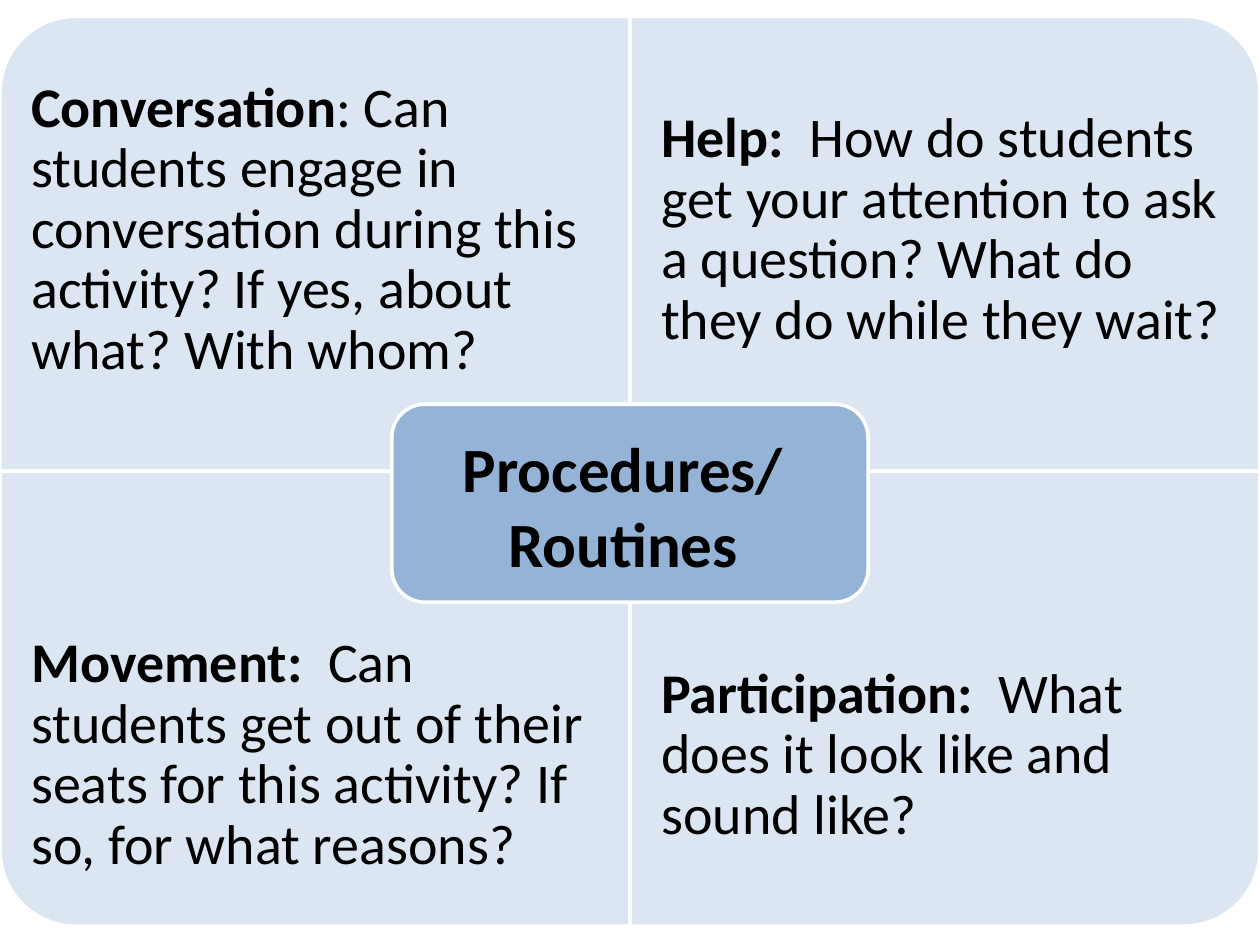
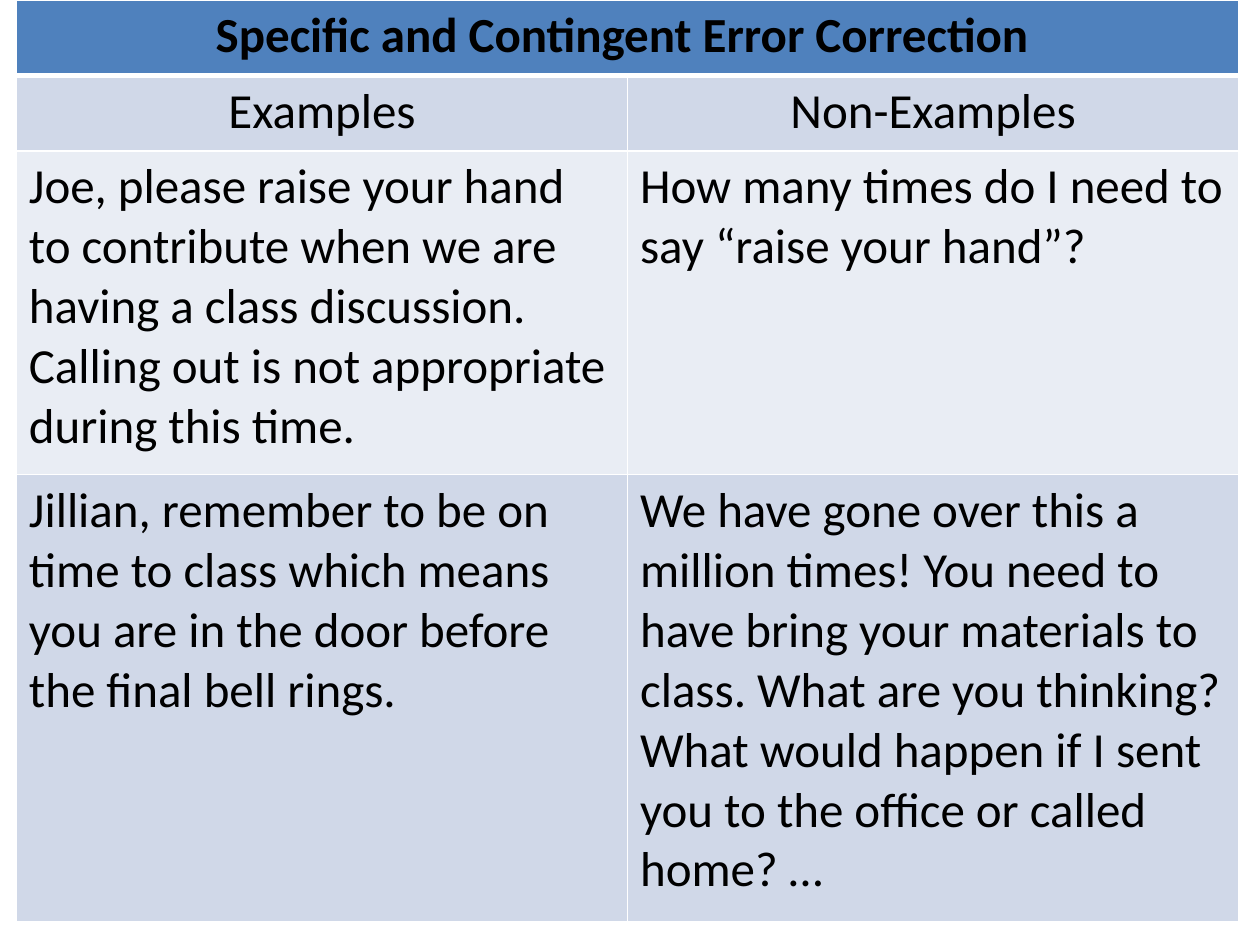
from lxml import etree
from pptx import Presentation
from pptx.dml.color import RGBColor
from pptx.enum.shapes import MSO_SHAPE
from pptx.enum.text import MSO_ANCHOR, PP_ALIGN
from pptx.oxml.ns import qn
from pptx.util import Cm, Pt

ROUND_ONE = MSO_SHAPE.ROUND_1_RECTANGLE
ROUND_ALL = MSO_SHAPE.ROUNDED_RECTANGLE
MIDDLE = MSO_ANCHOR.MIDDLE
CENTER, LEFT = PP_ALIGN.CENTER, PP_ALIGN.LEFT

FONT = "Calibri"
BLACK, WHITE = "000000", "FFFFFF"
TILE_BLUE, HUB_BLUE = "DCE6F2", "95B3D7"
HEADER_BLUE, BAND_DARK, BAND_LIGHT = "4F81BD", "D0D8E8", "E9EDF4"


def color(value):
    return RGBColor.from_string(value)


def write(para, size, parts, align=LEFT):
    """Fill a paragraph with (text, bold) parts in the common font."""
    para.alignment = align
    para.font.name = FONT
    para.font.size = Pt(size)
    para.font.color.rgb = color(BLACK)
    for text, bold in parts:
        span = para.add_run()
        span.text = text
        span.font.bold = bold


deck = Presentation()
deck.slide_width, deck.slide_height = Cm(25.4), Cm(19.05)
blank = deck.slide_layouts[6]

# Slide 1: four question tiles around a central topic
page = deck.slides.add_slide(blank)
TILE_WIDTH, TILE_HEIGHT, TILES_TOP = 12.7, 9.17, 0.33
TEXT_HEIGHT = 6.88
# column, row, rotation that turns the round corner outwards, text top
tiles = [
    (0, 0, 270, 1.2, "Conversation",
     ": Can students engage in conversation during this activity? If yes, about what? With whom?"),
    (1, 0, 0, 1.2, "Help:",
     "  How do students get your attention to ask a question? What do they do while they wait?"),
    (0, 1, 180, 11.79, "Movement:",
     "  Can students get out of their seats for this activity? If so, for what reasons?"),
    (1, 1, 90, 11.79, "Participation:",
     "  What does it look like and sound like?"),
]
panels = []
for column, row, turn, text_top, topic, question in tiles:
    # A quarter turn swaps the sides of the frame about its centre
    width, height = TILE_WIDTH, TILE_HEIGHT
    if turn % 180:
        width, height = height, width
    center_x = (column + 0.5) * TILE_WIDTH
    center_y = TILES_TOP + (row + 0.5) * TILE_HEIGHT
    tile = page.shapes.add_shape(ROUND_ONE, Cm(center_x - width / 2),
                                 Cm(center_y - height / 2), Cm(width), Cm(height))
    tile.rotation = turn
    panels.append((tile, TILE_BLUE))

    box = page.shapes.add_textbox(Cm(column * TILE_WIDTH), Cm(text_top),
                                  Cm(TILE_WIDTH), Cm(TEXT_HEIGHT))
    frame = box.text_frame
    frame.word_wrap = True
    frame.vertical_anchor = MIDDLE
    frame.margin_left = frame.margin_right = Cm(0.63)
    frame.margin_top = frame.margin_bottom = Cm(0.63)
    para = frame.paragraphs[0]
    para.line_spacing = 0.9
    write(para, 32, [(topic, True), (question, False)])

# Central topic
hub = page.shapes.add_shape(ROUND_ALL, Cm(7.9), Cm(8.15), Cm(9.6), Cm(3.99))
panels.append((hub, HUB_BLUE))
for panel, fill in panels:
    panel.shadow.inherit = False
    panel.fill.solid()
    panel.fill.fore_color.rgb = color(fill)
    panel.line.color.rgb = color(WHITE)
    panel.line.width = Pt(2)

box = page.shapes.add_textbox(Cm(7.62), Cm(8.53), Cm(9.88), Cm(3.33))
box.text_frame.word_wrap = True
write(box.text_frame.paragraphs[0], 36, [("Procedures/Routines", True)], CENTER)

# Slide 2: table of examples and non-examples
page = deck.slides.add_slide(blank)
rows = [
    (1.52, HEADER_BLUE, CENTER, ["Specific and Contingent Error Correction "]),
    (1.52, BAND_DARK, CENTER, ["Examples", "Non-Examples"]),
    (6.53, BAND_LIGHT, LEFT, [
        "Joe, please raise your hand to contribute when we are having a class discussion. "
        "Calling out is not appropriate during this time.",
        "How many times do I need to say “raise your hand”?"]),
    (9.02, BAND_DARK, LEFT, [
        "Jillian, remember to be on time to class which means you are in the door "
        "before the final bell rings.",
        "We have gone over this a million times! You need to have bring your materials to class. "
        "What are you thinking? What would happen if I sent you to the office or called home? …"]),
]
table = page.shapes.add_table(len(rows), 2, Cm(0.33), Cm(0), Cm(24.64), Cm(18.59)).table
table.cell(0, 0).merge(table.cell(0, 1))
for row, (height, fill, align, texts) in enumerate(rows):
    table.rows[row].height = Cm(height)
    for column, cell in enumerate(table.rows[row].cells):
        cell.fill.solid()
        cell.fill.fore_color.rgb = color(fill)
        if column < len(texts):
            write(cell.text_frame.paragraphs[0], 28, [(texts[column], row == 0)], align)

        # White borders, thicker below the header
        for place, side in enumerate(["lnL", "lnR", "lnT", "lnB"]):
            below_header = (row, side) in [(0, "lnB"), (1, "lnT")]
            border = etree.Element(qn(f"a:{side}"), w=str(Pt(3 if below_header else 1)))
            paint = etree.SubElement(border, qn("a:solidFill"))
            etree.SubElement(paint, qn("a:srgbClr"), val=WHITE)
            cell._tc.tcPr.insert(place, border)

deck.save("out.pptx")
